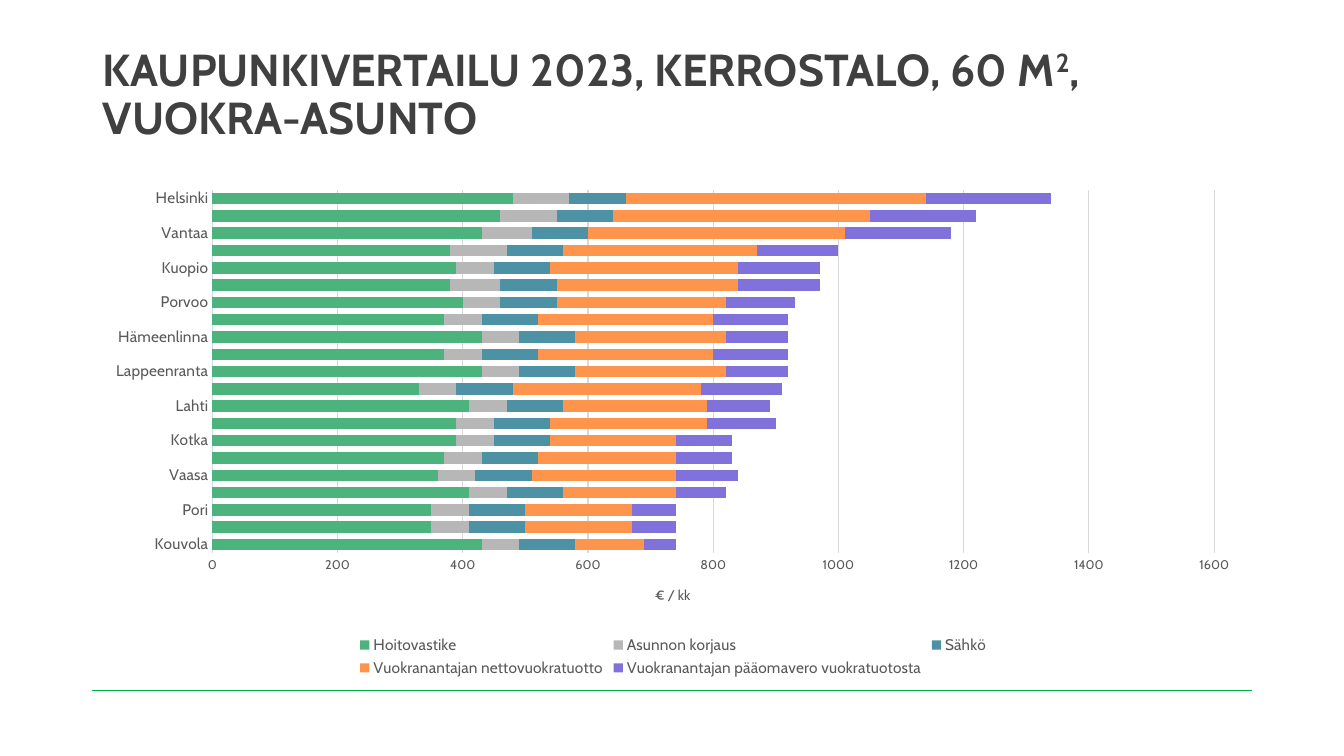
from lxml.etree import SubElement
from pptx import Presentation
from pptx.chart.data import CategoryChartData
from pptx.dml.color import RGBColor
from pptx.enum.chart import XL_CHART_TYPE, XL_LEGEND_POSITION, XL_TICK_MARK
from pptx.enum.shapes import MSO_CONNECTOR
from pptx.enum.text import MSO_ANCHOR
from pptx.oxml import parse_xml
from pptx.oxml.ns import nsdecls, qn
from pptx.util import Cm, Pt

FONT = "Cabin"
COLORS = {"title": "404040", "label": "595959", "grid": "D9D9D9", "rule": "00B050"}
CHART_WIDTH, CHART_HEIGHT = 29.21, 12.65
CITIES = ["Kouvola", "Rauma", "Pori", "Mikkeli", "Vaasa", "Seinäjoki", "Kotka",
          "Joensuu", "Lahti", "Oulu", "Lappeenranta", "Rovaniemi", "Hämeenlinna",
          "Jyväskylä", "Porvoo", "Turku", "Kuopio", "Tampere", "Vantaa", "Espoo",
          "Helsinki"]
COSTS = [
    ("Hoitovastike", "4CB37D",
     [430, 350, 350, 410, 360, 370, 390, 390, 410, 330, 430,
      370, 430, 370, 400, 380, 390, 380, 430, 460, 480]),
    ("Asunnon korjaus", "B7B7B7", [60] * 15 + [80, 60, 90, 80, 90, 90]),
    ("Sähkö", "4C91A4", [90] * 21),
    ("Vuokranantajan nettovuokratuotto", "FF944C",
     [110, 170, 170, 180, 230, 220, 200, 250, 230, 300, 240,
      280, 240, 280, 270, 290, 300, 310, 410, 410, 480]),
    ("Vuokranantajan pääomavero vuokratuotosta", "8172DB",
     [50, 70, 70, 80, 100, 90, 90, 110, 100, 130, 100,
      120, 100, 120, 110, 130, 130, 130, 170, 170, 200]),
]


def rgb(value):
    """Turn a hex string into a colour."""
    return RGBColor.from_string(value)


def set_font(font, size, color, bold=False):
    """Apply the slide's typeface with a size, colour and weight."""
    font.name, font.size, font.bold = FONT, Pt(size), bold
    font.color.rgb = rgb(color)


def add_run(p, text, size, color, bold=False, superscript=False):
    """Add a formatted run to a paragraph."""
    r = p.add_run()
    r.text = text
    set_font(r.font, size, color, bold)
    if superscript:
        r.font._element.set("baseline", "30000")


def add_title(slide, parts):
    """Add the heading from pairs of text and superscript flag."""
    sp = slide.shapes.add_textbox(Cm(2.34), Cm(1.02), Cm(29.21), Cm(2.79))
    tf = sp.text_frame
    tf.word_wrap = True
    tf.vertical_anchor = MSO_ANCHOR.MIDDLE
    p = tf.paragraphs[0]
    p.line_spacing = 0.9
    for text, superscript in parts:
        add_run(p, text, size=32, color=COLORS["title"], bold=True,
                superscript=superscript)


def add_rule(slide):
    """Add the green line at the foot of the slide."""
    line = slide.shapes.add_connector(
        MSO_CONNECTOR.STRAIGHT, Cm(2.31), Cm(17.4), Cm(31.55), Cm(17.4))
    line.line.fill.solid()
    line.line.fill.fore_color.rgb = rgb(COLORS["rule"])
    line.line.width = Pt(1)
    SubElement(line._element.spPr, qn("a:effectLst"))
    line._element.remove(line._element.find(qn("p:style")))


def place_plot(chart, left, top, width, height):
    """Fix the inner plot area, in centimetres within the chart."""
    area = chart._chartSpace.chart.plotArea
    for old in area.findall(qn("c:layout")):
        area.remove(old)
    box = {"x": left / CHART_WIDTH, "y": top / CHART_HEIGHT,
           "w": width / CHART_WIDTH, "h": height / CHART_HEIGHT}
    sizes = "".join(f'<c:{key} val="{value}"/>' for key, value in box.items())
    area.insert(0, parse_xml(
        f'<c:layout {nsdecls("c")}><c:manualLayout><c:layoutTarget val="inner"/>'
        f'<c:xMode val="edge"/><c:yMode val="edge"/>{sizes}'
        '</c:manualLayout></c:layout>'))


def style_axis(axis, size):
    """Set an axis's label font and hide its tick marks."""
    axis.major_tick_mark = axis.minor_tick_mark = XL_TICK_MARK.NONE
    set_font(axis.tick_labels.font, size, COLORS["label"])


def style_line(line):
    """Draw a thin grey chart line."""
    line.color.rgb = rgb(COLORS["grid"])
    line.width = Pt(0.75)


def add_cost_chart(slide):
    """Add the stacked bars of monthly costs by city."""
    data = CategoryChartData(number_format="0")
    data.categories = CITIES
    for name, _, values in COSTS:
        data.add_series(name, values)
    chart = slide.shapes.add_chart(
        XL_CHART_TYPE.BAR_STACKED, Cm(2.36), Cm(4.52),
        Cm(CHART_WIDTH), Cm(CHART_HEIGHT), data).chart
    set_font(chart.font, 10, COLORS["label"])
    chart.has_title = False
    plot = chart.plots[0]
    plot.gap_width, plot.overlap = 50, 100
    plot.vary_by_categories = False
    for series, (_, color, _) in zip(plot.series, COSTS):
        series.format.fill.solid()
        series.format.fill.fore_color.rgb = rgb(color)

    cities, euros = chart.category_axis, chart.value_axis
    style_axis(cities, 11)
    style_line(cities.format.line)
    style_axis(euros, 9)
    euros.format.line.fill.background()
    euros.minimum_scale, euros.maximum_scale, euros.major_unit = 0, 1600, 200
    euros.has_major_gridlines = True
    style_line(euros.major_gridlines.format.line)
    euros.tick_labels.number_format = "0"
    euros.tick_labels.number_format_is_linked = False
    add_run(euros.axis_title.text_frame.paragraphs[0], "€ / kk",
            size=10, color=COLORS["label"])

    chart.has_legend = True
    chart.legend.position = XL_LEGEND_POSITION.BOTTOM
    chart.legend.include_in_layout = False
    set_font(chart.legend.font, 11, COLORS["label"])
    place_plot(chart, left=2.99, top=0.27, width=25.25, height=9.15)


def main():
    """Build the slide and save it."""
    prs = Presentation()
    prs.slide_width, prs.slide_height = Cm(33.87), Cm(19.05)
    slide = prs.slides.add_slide(prs.slide_layouts[6])
    add_rule(slide)
    add_title(slide, [("KAUPUNKIVERTAILU 2023, KERROSTALO, 60 M", False),
                      ("2", True), (", VUOKRA-ASUNTO", False)])
    add_cost_chart(slide)
    prs.save("out.pptx")


if __name__ == "__main__":
    main()
